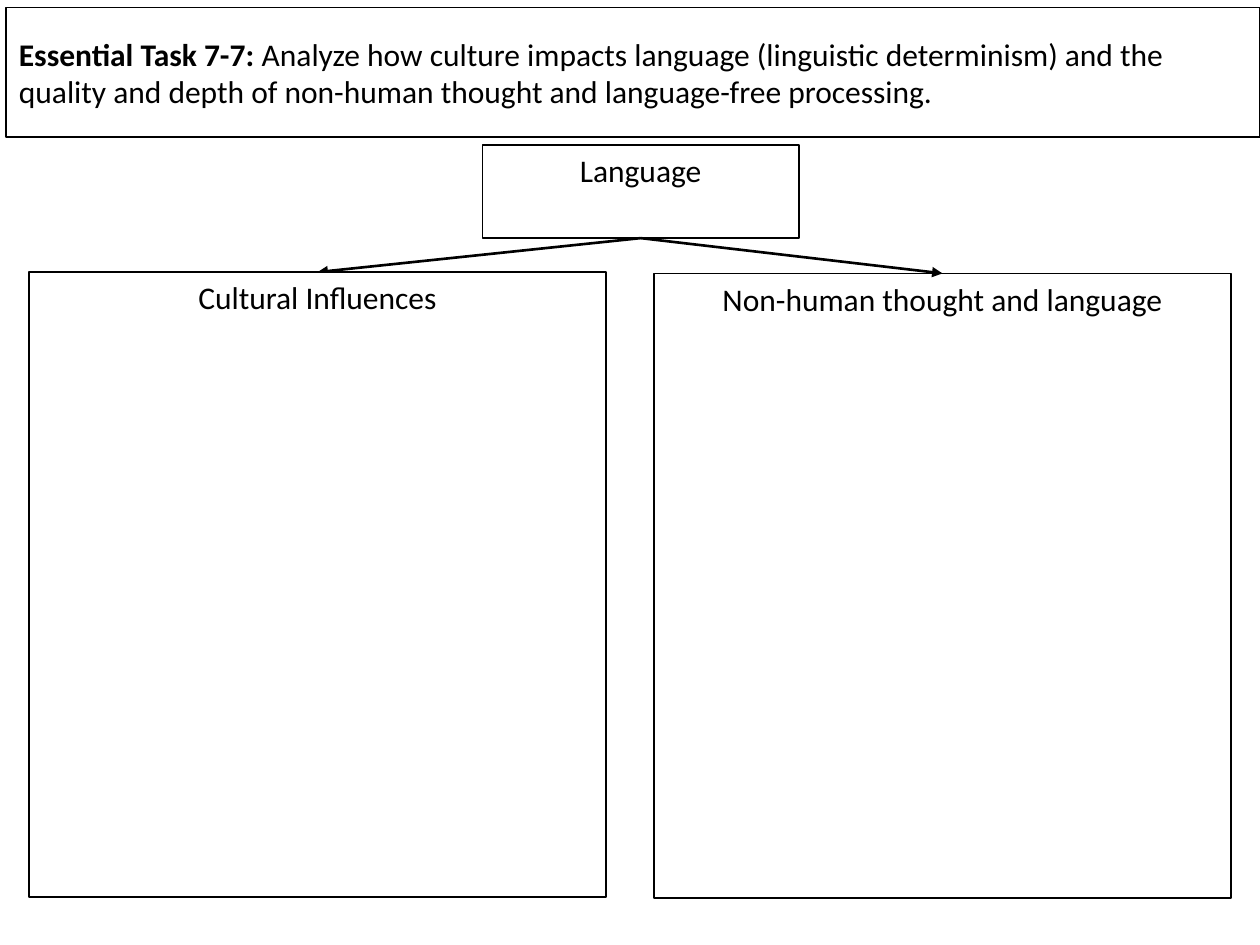
from pptx import Presentation
from pptx.dml.color import RGBColor
from pptx.enum import shapes, text
from pptx.oxml import ns
from pptx.util import Inches, Pt
from lxml import etree

COLORS = {"ink": "000000", "paper": "FFFFFF"}
FONT = "Calibri"


def color(name):
    return RGBColor.from_string(COLORS[name])


def add_text(paragraph, content, size=18, bold=False, align=text.PP_ALIGN.CENTER):
    paragraph.alignment = align
    run = paragraph.add_run()
    run.text = content
    run.font.name = FONT
    run.font.size = Pt(size)
    run.font.bold = bold
    run.font.color.rgb = color("ink")


def outline(shape, anchor):
    """White box with a thin black border."""
    shape.fill.solid()
    shape.fill.fore_color.rgb = color("paper")
    shape.line.color.rgb = color("ink")
    shape.line.width = Pt(1)
    frame = shape.text_frame
    frame.word_wrap = True
    frame.auto_size = text.MSO_AUTO_SIZE.NONE
    frame.vertical_anchor = anchor
    return frame.paragraphs[0]


def place_task(slide, box):
    title = slide.shapes.title
    title.left, title.top, title.width, title.height = map(Inches, box)
    paragraph = outline(title, text.MSO_ANCHOR.MIDDLE)
    left = text.PP_ALIGN.LEFT
    add_text(paragraph, "Essential Task 7-7:\u00a0", bold=True, align=left)
    add_text(paragraph, "Analyze how culture impacts language (linguistic determinism) "
             "and the quality and depth of non-human thought and language-free processing.",
             align=left)


def place_topic(slide, box, label):
    shape = slide.shapes.add_shape(shapes.MSO_SHAPE.RECTANGLE, *map(Inches, box))
    shape.shadow.inherit = False
    add_text(outline(shape, text.MSO_ANCHOR.TOP), label)


def place_arrow(slide, parent, child):
    """Arrow from the bottom centre of one box to the top centre of another."""
    start = (parent[0] + parent[2] / 2, parent[1] + parent[3])
    end = (child[0] + child[2] / 2, child[1])
    arrow = slide.shapes.add_connector(
        shapes.MSO_CONNECTOR.STRAIGHT, *map(Inches, start + end))
    arrow.line.color.rgb = color("ink")
    arrow.line.width = Pt(1.5)
    line = arrow.line._get_or_add_ln()
    etree.SubElement(line, ns.qn("a:tailEnd"), type="triangle")
    etree.SubElement(arrow._element.spPr, ns.qn("a:effectLst"))


def main():
    presentation = Presentation()
    presentation.slide_width, presentation.slide_height = Inches(10), Inches(7.5)
    slide = presentation.slides.add_slide(presentation.slide_layouts[5])

    # Task statement
    place_task(slide, (0.05, 0.06, 9.95, 1.03))

    # Root topic and its two branches
    root = (3.83, 1.15, 2.51, 0.74)
    cultural = (0.23, 2.16, 4.58, 4.96)
    non_human = (5.19, 2.17, 4.58, 4.96)
    place_topic(slide, root, "Language")
    place_arrow(slide, root, cultural)
    place_topic(slide, cultural, "Cultural Influences")
    place_topic(slide, non_human, "Non-human thought and language")
    place_arrow(slide, root, non_human)

    presentation.save("out.pptx")


if __name__ == "__main__":
    main()
